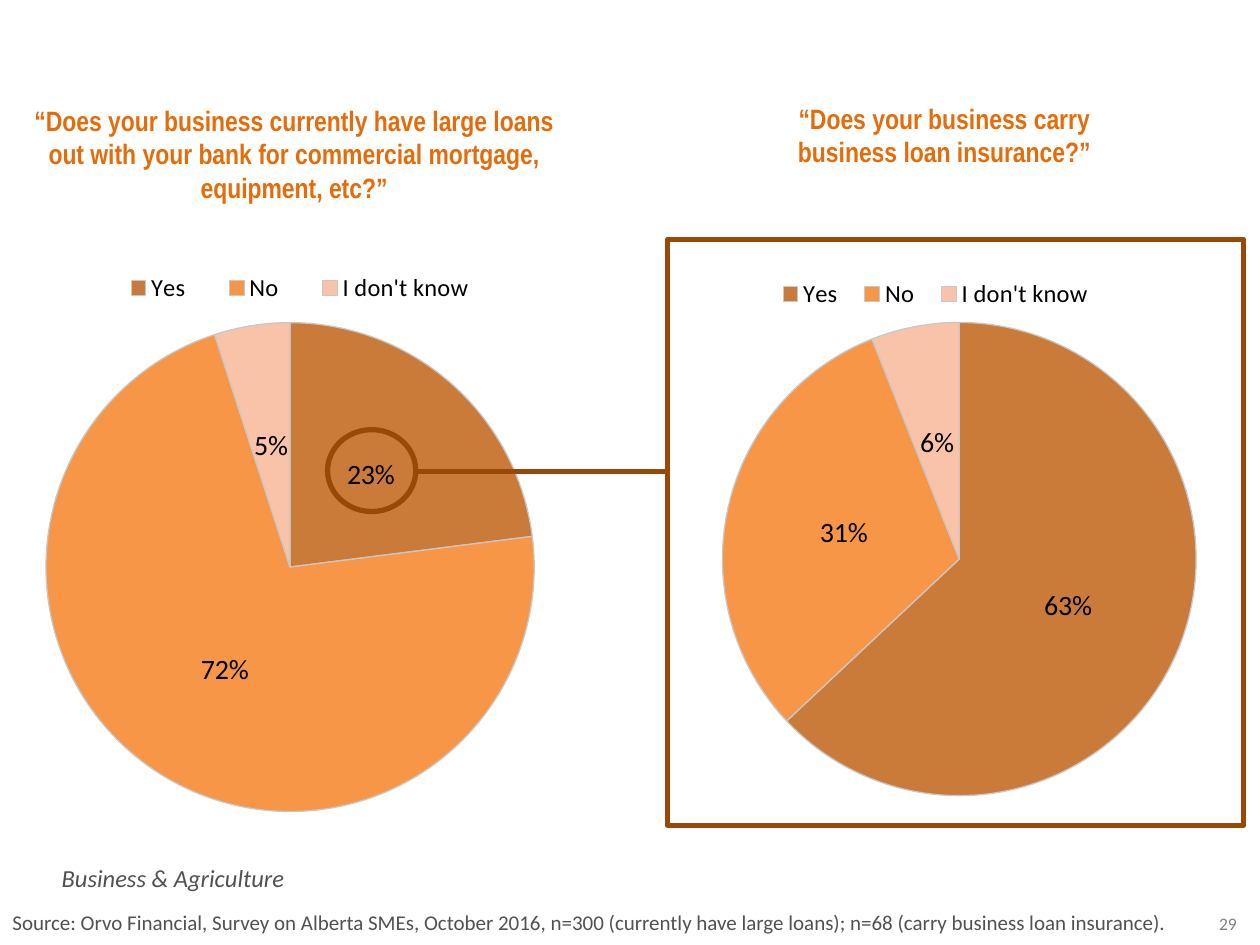
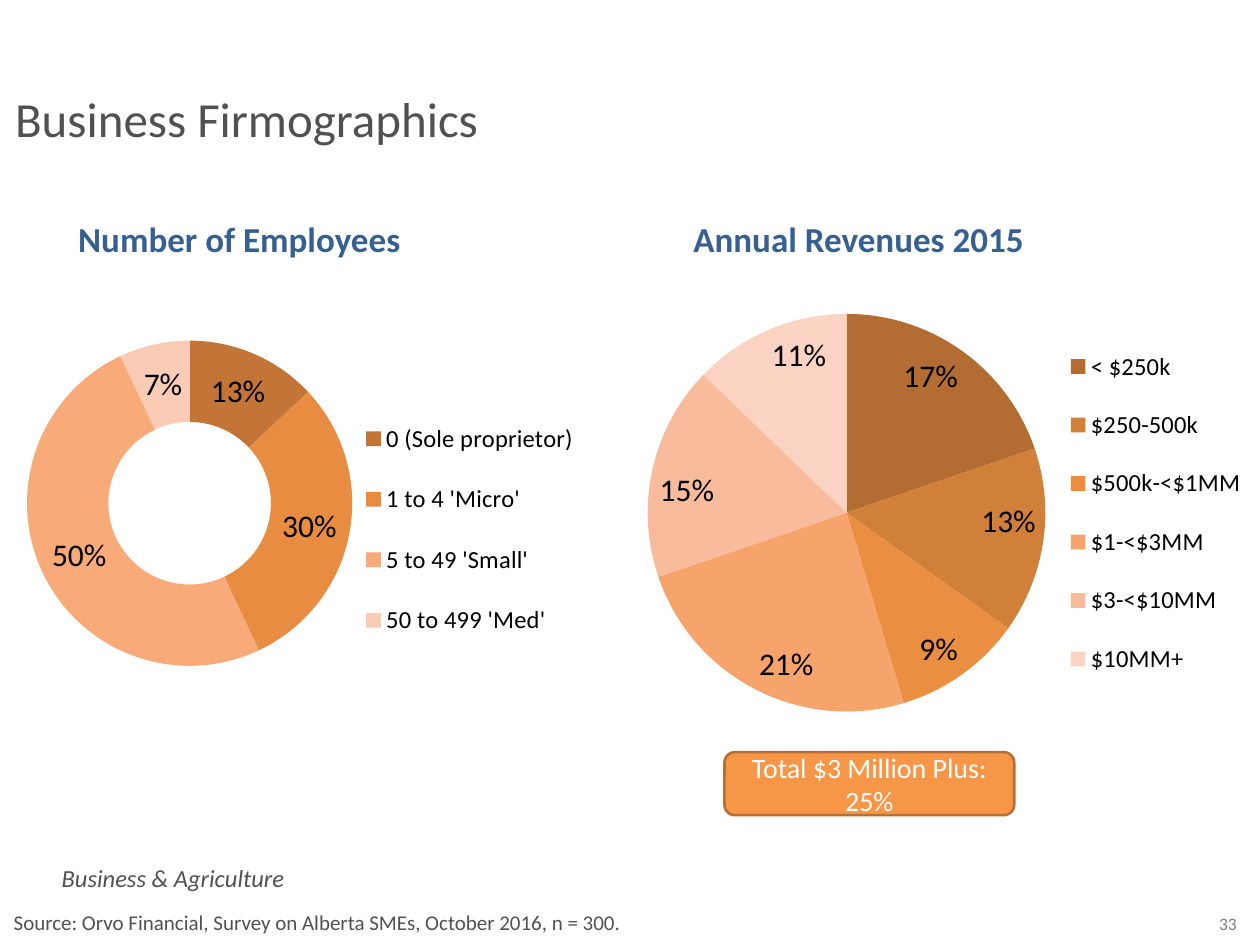
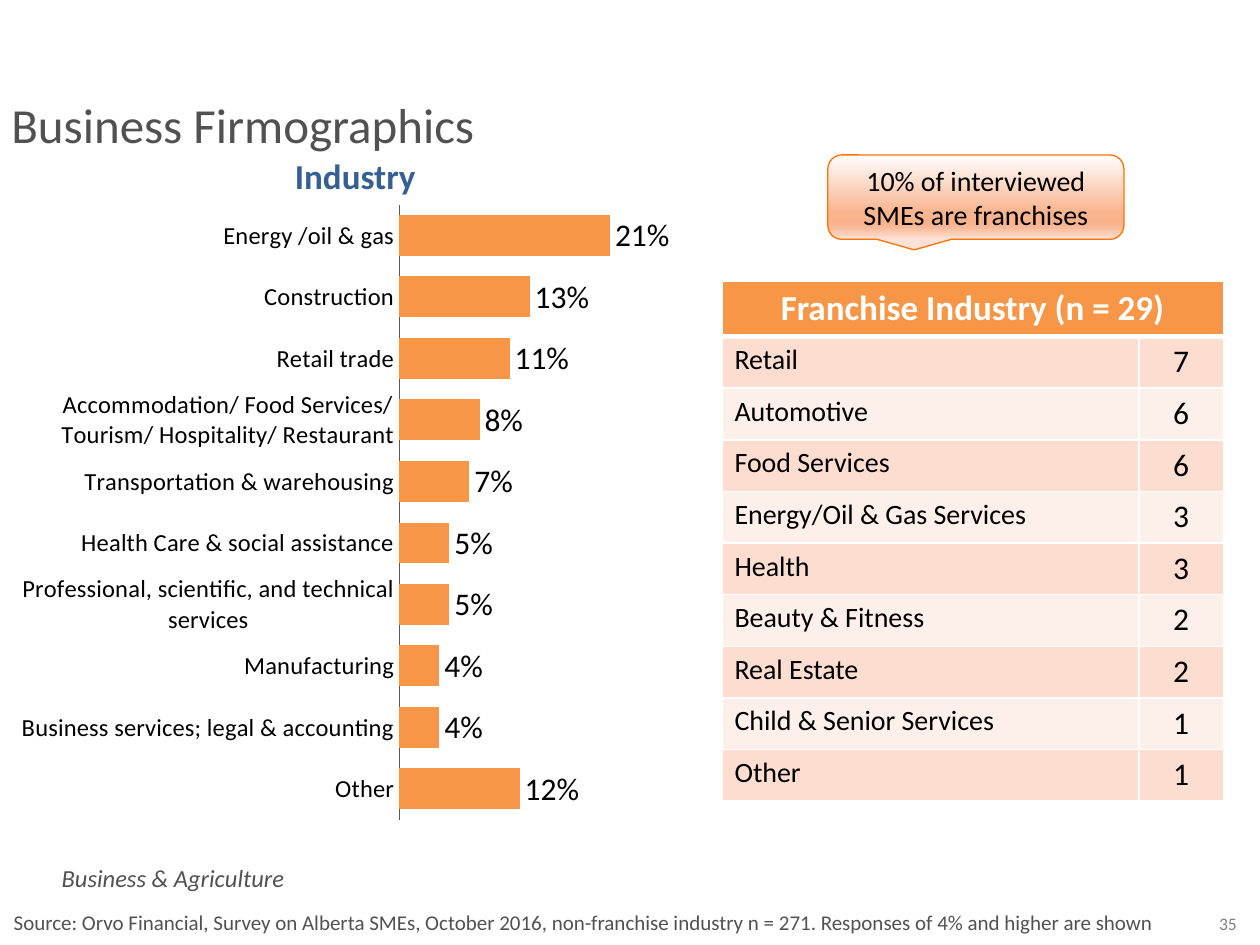
from lxml import etree
from pptx import Presentation
from pptx.chart.data import CategoryChartData
from pptx.dml.color import RGBColor
from pptx.enum.chart import (XL_CHART_TYPE, XL_LABEL_POSITION,
                             XL_LEGEND_POSITION, XL_TICK_MARK)
from pptx.enum.shapes import MSO_CONNECTOR, MSO_SHAPE
from pptx.enum.text import MSO_ANCHOR, PP_ALIGN
from pptx.oxml.ns import qn
from pptx.util import Inches, Pt

LEFT, MID = PP_ALIGN.LEFT, PP_ALIGN.CENTER
TOP, CENTRE = MSO_ANCHOR.TOP, MSO_ANCHOR.MIDDLE
PIE, RING, BAR = XL_CHART_TYPE.PIE, XL_CHART_TYPE.DOUGHNUT, XL_CHART_TYPE.BAR_CLUSTERED
IN_END, IN_MID = XL_LABEL_POSITION.INSIDE_END, XL_LABEL_POSITION.CENTER
OUT_END = XL_LABEL_POSITION.OUTSIDE_END
RIGHT, NO_TICK = XL_LEGEND_POSITION.RIGHT, XL_TICK_MARK.NONE
CALL, ROUND = MSO_SHAPE.ROUNDED_RECTANGULAR_CALLOUT, MSO_SHAPE.ROUNDED_RECTANGLE
OVAL, RECT, LINE = MSO_SHAPE.OVAL, MSO_SHAPE.RECTANGLE, MSO_CONNECTOR.STRAIGHT

HEX = {"text": "505150", "page": "808080", "ask": "E46C0A", "head": "376092",
       "black": "000000", "white": "FFFFFF", "orange": "F79646", "brown": "984807",
       "edge": "B76F34", "glow": "FE7300", "odd": "FCDDCF", "even": "FDEFE9",
       "rim": "C8C8C8", "axis": "595959"}
INK = {name: RGBColor.from_string(code) for name, code in HEX.items()}


def write(frame, text, size, ink, align=LEFT, anchor=TOP, **style):
    """Fill a text frame, one paragraph for each line of the text."""
    frame.word_wrap = True
    frame.vertical_anchor = anchor
    look = {"name": "Calibri", "size": Pt(size), "bold": False, **style}
    for i, line in enumerate(text.split("\n")):
        para = frame.add_paragraph() if i else frame.paragraphs[0]
        para.text = line
        para.alignment = align
        for run in para.runs:
            for key, value in look.items():
                setattr(run.font, key, value)
            run.font.color.rgb = INK[ink]


def place(node, spot, index, inner):
    """Give a plot area or legend a fixed place, in parts of the chart."""
    for old in node.findall(qn("c:layout")):
        node.remove(old)
    layout = etree.Element(qn("c:layout"))
    node.insert(index, layout)
    manual = etree.SubElement(layout, qn("c:manualLayout"))
    marks = [("layoutTarget", "inner")] if inner else []
    marks += [("xMode", "edge"), ("yMode", "edge"), *zip("xywh", spot)]
    for tag, value in marks:
        etree.SubElement(manual, qn("c:" + tag)).set("val", str(value))


deck = Presentation()
deck.slide_width, deck.slide_height = Inches(10), Inches(7.5)
loans = deck.slides.add_slide(deck.slide_layouts[6])
firms, trades = [deck.slides.add_slide(deck.slide_layouts[5]) for _ in range(2)]

# Titles
for slide, left, top, width in [(firms, 0.02, 0.65, 8.87), (trades, -0.01, 0.7, 5.84)]:
    title = slide.shapes.title
    title.left, title.top = Inches(left), Inches(top)
    title.width, title.height = Inches(width), Inches(0.57)
    write(title.text_frame, "Business Firmographics", 28, "text")

# Pies and ring
answers = ["Yes", "No", "I don't know"]
staff = ["0 (Sole proprietor)", "1 to 4 'Micro'", "5 to 49 'Small'", "50 to 499 'Med'"]
sales = ["< $250k", "$250-500k", "$500k-<$1MM", "$1-<$3MM", "$3-<$10MM", "$10MM+"]
three = ["CA7B3A", "F79646", "F8C3A8"]
four = ["C27536", "E88C41", "F8AA79", "FACBB5"]
six = ["B36C32", "D08039", "EA8F42", "F7A36C", "F8BB9B", "FBD3C2"]
pies = [
    (loans, PIE, (0.36, 1.79, 3.92, 4.93), answers, (0.23, 0.72, 0.05), three,
     (0, 0.14, 0.99, 0.82), (0.1, 0.06, 0.83, 0.08), 16, IN_MID),
    (loans, PIE, (5.17, 1.79, 4.7, 4.53), answers, (0.63, 0.31, 0.06), three,
     (0.04, 0.17, 0.96, 0.83), (0.19, 0.08, 0.58, 0.08), 16, IN_MID),
    (firms, RING, (-0.12, 1.79, 4.78, 4.16), staff, (0.13, 0.3, 0.5, 0.07), four,
     (0.07, 0.12, 0.54, 0.82), (0.62, 0.32, 0.37, 0.52), 18, None),
    (firms, PIE, (4.99, 1.79, 5.01, 4.56), sales, (0.17, 0.13, 0.09, 0.21, 0.15, 0.11),
     six, (0.03, 0.15, 0.63, 0.7), (0.68, 0.17, 0.31, 0.66), 18, IN_END),
]
for slide, kind, box, names, values, tints, area, key, size, spot in pies:
    data = CategoryChartData(number_format="0%")
    data.categories = names
    data.add_series("Series 1", values)
    chart = slide.shapes.add_chart(kind, *map(Inches, box), data).chart
    chart.has_title = False
    chart.font.name, chart.font.size = "Calibri", Pt(18)
    chart.font.color.rgb = INK["black"]
    chart.has_legend = True
    legend = chart.legend
    legend.position, legend.include_in_layout = RIGHT, False
    legend.font.size, legend.font.name = Pt(14), "Calibri"
    legend.font.color.rgb = INK["black"]
    place(chart._chartSpace.chart.plotArea, area, 0, True)
    place(legend._element, key, 1, False)
    plot = chart.plots[0]
    plot.vary_by_categories = True
    plot.has_data_labels = True
    labels = plot.data_labels
    labels.show_value, labels.show_percentage = True, False
    labels.number_format, labels.number_format_is_linked = "0%", False
    labels.font.size, labels.font.name = Pt(size), "Calibri"
    labels.font.color.rgb = INK["black"]
    if spot is not None:
        labels.position = spot
    for i, tint in enumerate(tints):
        form = plot.series[0].points[i].format
        form.fill.solid()
        form.fill.fore_color.rgb = RGBColor.from_string(tint)
        if slide is loans:
            form.line.color.rgb = INK["rim"]
            form.line.width = Pt(0.75)
        else:
            form.line.fill.background()

# Industry bars
data = CategoryChartData(number_format="0%")
data.categories = [
    "Energy /oil & gas", "Construction", "Retail trade",
    "Accommodation/ Food Services/ Tourism/ Hospitality/ Restaurant",
    "Transportation & warehousing", "Health Care & social assistance",
    "Professional, scientific, and technical services", "Manufacturing",
    "Business services; legal & accounting", "Other"]
data.add_series("Series 1", (0.21, 0.13, 0.11, 0.08, 0.07, 0.05, 0.05, 0.04, 0.04, 0.12))
chart = trades.shapes.add_chart(
    BAR, Inches(0), Inches(1.62), Inches(5.56), Inches(5.09), data).chart
chart.has_title = chart.has_legend = False
chart.font.name, chart.font.size = "Calibri", Pt(18)
chart.font.color.rgb = INK["black"]
place(chart._chartSpace.chart.plotArea, (0.57, 0, 0.43, 0.96), 0, True)
cats, scale = chart.category_axis, chart.value_axis
cats.reverse_order = True
cats.major_tick_mark = cats.minor_tick_mark = NO_TICK
cats.tick_labels.font.size = Pt(14)
cats.format.line.color.rgb = INK["axis"]
scale.visible = scale.has_major_gridlines = False
scale.minimum_scale, scale.maximum_scale = 0, 0.3
plot = chart.plots[0]
plot.gap_width, plot.vary_by_categories = 50, False
fill = plot.series[0].format.fill
fill.solid()
fill.fore_color.rgb = INK["orange"]
plot.has_data_labels = True
labels = plot.data_labels
labels.show_value, labels.position = True, OUT_END
labels.number_format, labels.number_format_is_linked = "0%", False
labels.font.size = Pt(18)

# Franchise table
rows = [("Retail", 7), ("Automotive", 6), ("Food Services", 6),
        ("Energy/Oil & Gas Services", 3), ("Health", 3), ("Beauty & Fitness", 2),
        ("Real Estate", 2), ("Child & Senior Services", 1), ("Other", 1)]
table = trades.shapes.add_table(len(rows) + 1, 2, Inches(5.73), Inches(2.23),
                                Inches(3.98), Inches(4.08)).table
table.columns[0].width, table.columns[1].width = Inches(3.31), Inches(0.67)
head = table.cell(0, 0)
head.merge(table.cell(0, 1))
write(head.text_frame, "Franchise Industry (n = 29)", 20, "white", MID, bold=True)
for r, (trade, count) in enumerate(rows, 1):
    write(table.cell(r, 0).text_frame, trade, 16, "black")
    write(table.cell(r, 1).text_frame, str(count), 18, "black", MID)
for r, row in enumerate(table.rows):
    row.height = Inches(0.41)
    for cell in row.cells:
        props = cell._tc.get_or_add_tcPr()
        for side in "LRTB":
            thick = (r == 0 and side == "B") or (r == 1 and side == "T")
            edge = etree.SubElement(props, qn("a:ln" + side), w=str(Pt(3 if thick else 1)))
            paint = etree.SubElement(edge, qn("a:solidFill"))
            etree.SubElement(paint, qn("a:srgbClr"), val=HEX["white"])
        cell.fill.solid()
        cell.fill.fore_color.rgb = INK["orange" if r == 0 else "odd" if r % 2 else "even"]

# Shapes: slide, kind, box, fill, line, line width, text, size, ink, style
ask = {"name": "Arial Narrow", "bold": True}
shapes = [
    (loans, CALL, (0, 0.66, 4.67, 1.12), None, None, 0,
     "“Does your business currently have large loans out with your bank for "
     "commercial mortgage,\nequipment, etc?”", 16, "ask", ask),
    (loans, CALL, (5.85, 0.79, 3.29, 0.56), None, None, 0,
     "“Does your business carry business loan insurance?”", 16, "ask", ask),
    (loans, OVAL, (2.6, 3.41, 0.7, 0.65), None, "brown", 3, "", 16, "black", {}),
    (loans, RECT, (5.3, 1.9, 4.57, 4.65), None, "brown", 3, "", 16, "black", {}),
    (firms, ROUND, (5.75, 5.97, 2.3, 0.5), "orange", "edge", 1.5,
     "Total $3 Million Plus:\v25%", 16, "white", {}),
    (trades, CALL, (6.57, 1.23, 2.35, 0.67), "glow", "glow", 0.75,
     "10% of interviewed SMEs are franchises", 16, "black", {}),
]
for slide, kind, box, paint, edge, weight, text, size, ink, style in shapes:
    shape = slide.shapes.add_shape(kind, *map(Inches, box))
    shape.shadow.inherit = False
    if paint:
        shape.fill.solid()
        shape.fill.fore_color.rgb = INK[paint]
    else:
        shape.fill.background()
    if edge:
        shape.line.color.rgb = INK[edge]
        shape.line.width = Pt(weight)
    else:
        shape.line.fill.background()
        shape.adjustments[0], shape.adjustments[1] = -0.15, 0.39
    if text:
        write(shape.text_frame, text, size, ink, MID, CENTRE, **style)

# Glow of the franchise callout, the last shape
shape.fill.gradient()
shape.fill.gradient_angle = 270
stops = shape._element.spPr.find(".//" + qn("a:gsLst"))
for stop in list(stops):
    stops.remove(stop)
for part, tint in [(0, "FFFEFE"), (68, "F9B590"), (81, "F9B38C"),
                   (86, "F9BA99"), (100, "FCE1D6")]:
    stop = etree.SubElement(stops, qn("a:gs"), pos=str(part * 1000))
    etree.SubElement(stop, qn("a:srgbClr"), val=tint)

# Line from the circled share to the frame
link = loans.shapes.add_connector(LINE, Inches(3.3), Inches(3.74), Inches(5.3), Inches(3.74))
link.line.color.rgb = INK["brown"]
link.line.width = Pt(3)
etree.SubElement(link._element.spPr, qn("a:effectLst"))

# Chart headings
for slide, box, text in [
        (firms, (0.37, 1.68, 3.06, 0.44), "Number of Employees"),
        (firms, (5.21, 1.68, 3.21, 0.44), "Annual Revenues 2015"),
        (trades, (1.54, 1.18, 2.56, 0.44), "Industry")]:
    note = slide.shapes.add_textbox(*map(Inches, box))
    write(note.text_frame, text, 20, "head", MID, bold=True)

# Footers: section, source and page number
survey = "Source: Orvo Financial, Survey on Alberta SMEs, October 2016, "
for slide, page, left, rest in [
        (loans, "29", 0, "n=300 (currently have large loans); n=68 (carry business loan insurance)."),
        (firms, "33", 0.01, "n = 300."),
        (trades, "35", 0.01,
         "non-franchise industry n = 271. Responses of 4% and higher are shown")]:
    for box, text, size, ink, align, style in [
            ((0.39, 6.8, 2.81, 0.34), "Business & Agriculture", 14, "text", LEFT,
             {"italic": True}),
            ((left, 7.17, 9.99, 0.3), survey + rest, 12, "text", LEFT, {}),
            ((9.5, 7.2, 0.49, 0.27), page, 10, "page", MID, {})]:
        note = slide.shapes.add_textbox(*map(Inches, box))
        write(note.text_frame, text, size, ink, align, **style)

deck.save("out.pptx")
